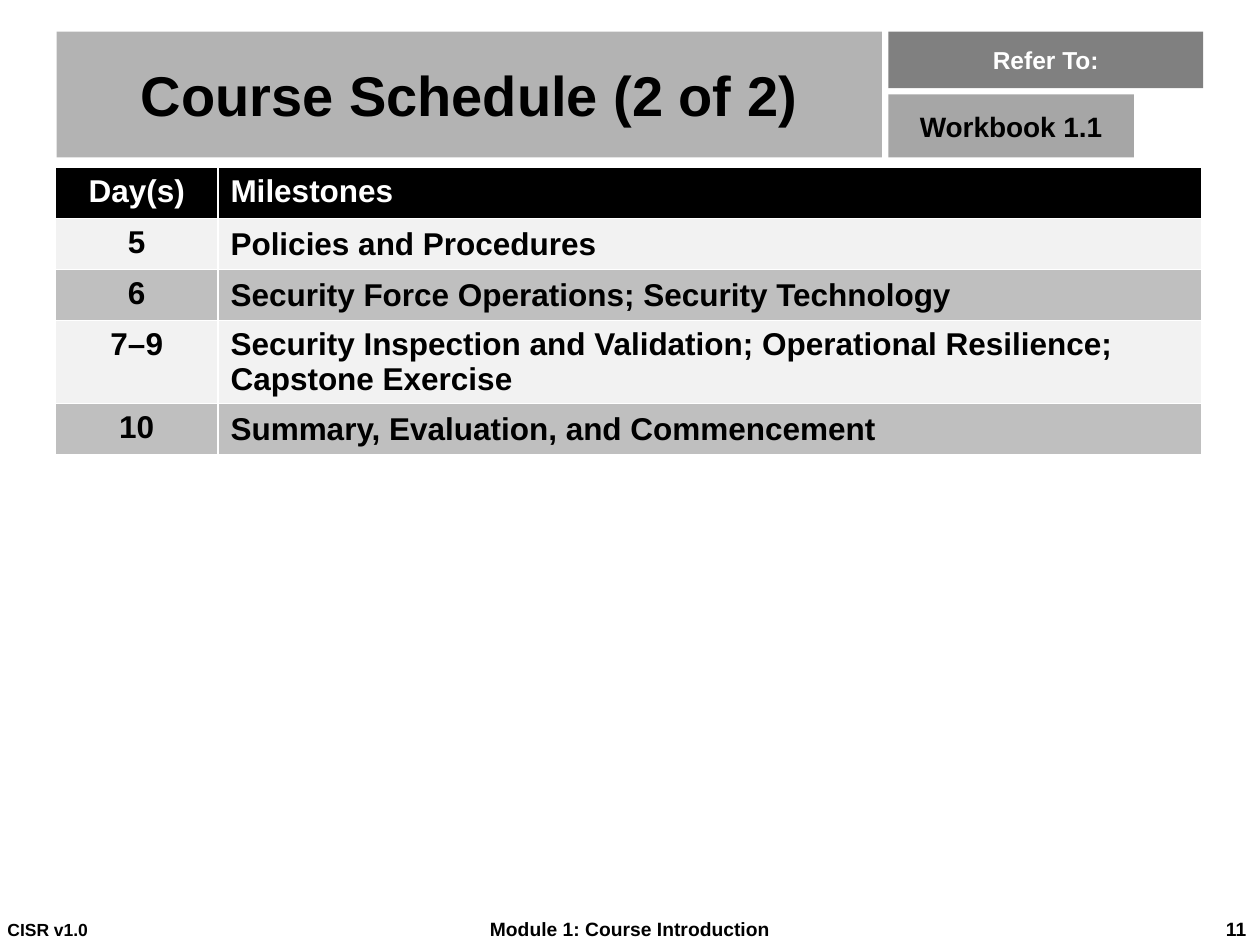
from pptx import Presentation
from pptx.dml.color import RGBColor
from pptx.enum.shapes import MSO_SHAPE as Shape
from pptx.enum.text import MSO_ANCHOR as Anchor, MSO_AUTO_SIZE as AutoSize, PP_ALIGN as Align
from pptx.util import Inches, Pt

COLORS = {
    "black": "000000", "white": "FFFFFF", "title": "B3B3B3", "label": "808080",
    "reference": "A6A6A6", "light": "F2F2F2", "dark": "BFBFBF",
}
CELL = 0.05
SCHEDULE = [
    ("Day(s)", "Milestones"),
    ("5", "Policies and Procedures"),
    ("6", "Security Force Operations; Security Technology"),
    ("7–9", "Security Inspection and Validation; Operational Resilience; Capstone Exercise"),
    ("10", "Summary, Evaluation, and Commencement"),
]


def grid(*counts):
    """Turn counts of grid cells into lengths."""
    return [Inches(count * CELL) for count in counts]


def paint(target, color):
    """Give a shape or table cell a solid fill."""
    target.fill.solid()
    target.fill.fore_color.rgb = RGBColor.from_string(COLORS[color])


def write(frame, text, size, color="black", align=Align.CENTER, anchor=Anchor.MIDDLE, insets=None):
    """Write one bold paragraph in a text frame."""
    frame.word_wrap = True
    frame.vertical_anchor = anchor
    if insets:
        frame.margin_left, frame.margin_right = map(Inches, insets)
        frame.margin_top = frame.margin_bottom = Inches(0.01)
    para = frame.paragraphs[0]
    para.alignment = align
    span = para.add_run()
    span.text = text
    span.font.name = "Arial"
    span.font.size = Pt(size)
    span.font.bold = True
    span.font.color.rgb = RGBColor.from_string(COLORS[color])


def add_panel(page, box, text, fill, size, color="black"):
    """Place a filled rectangle with a centred label."""
    panel = page.shapes.add_shape(Shape.RECTANGLE, *grid(*box))
    panel.shadow.inherit = False
    panel.line.fill.background()
    paint(panel, fill)
    write(panel.text_frame, text, size, color, insets=(0.01, 0.01))


def add_header(page, left, top, width, height):
    """Place the title and, to its right, the two reference panels."""
    title_width, gap = 131, 1
    title = page.shapes.title
    title.left, title.top, title.width, title.height = grid(left, top, title_width, height)
    paint(title, "title")
    title.text_frame.auto_size = AutoSize.NONE
    write(title.text_frame, "Course Schedule (2 of 2)", 32)

    side = left + title_width + gap
    label_height = 9
    lower = label_height + gap
    add_panel(page, (side, top, left + width - side, label_height),
              "Refer To:", "label", 14, "white")
    add_panel(page, (side, top + lower, 39, height - lower),
              "Workbook 1.1", "reference", 16)


def add_schedule(page, left, top, width, height):
    """Place the table of days and milestones, with one taller row for two lines."""
    table = page.shapes.add_table(len(SCHEDULE), 2, *grid(left, top, width, height)).table
    day_width, row_height = 25.8, 8.1
    tall_row = 3
    table.columns[0].width, table.columns[1].width = grid(day_width, width - day_width)
    for index, texts in enumerate(SCHEDULE):
        spare = height - row_height * (len(SCHEDULE) - 1)
        table.rows[index].height, = grid(spare if index == tall_row else row_height)
        header = index == 0
        fill = "black" if header else "light" if index % 2 else "dark"
        for column, text in enumerate(texts):
            cell = table.cell(index, column)
            paint(cell, fill)
            middle = column == 1 and not header
            cell.vertical_anchor = Anchor.MIDDLE if middle else Anchor.TOP
            write(cell.text_frame, text, 18, "white" if header else "black",
                  Align.LEFT if column else Align.CENTER, cell.vertical_anchor)


def add_footer(page, top, height):
    """Place the version, module name and page number along the bottom."""
    parts = [
        ("CISR v1.0", 1, 62, 10, Align.LEFT, (0.01, 0.05)),
        ("Module 1: Course Introduction", 65, 70, 11, Align.CENTER, (0.1, 0.1)),
        ("11", 191, 8.8, 11, Align.RIGHT, (0.1, 0.1)),
    ]
    for text, left, width, size, align, insets in parts:
        box = page.shapes.add_textbox(*grid(left, top, width, height))
        write(box.text_frame, text, size, align=align, insets=insets)


def main():
    """Build the course schedule slide."""
    deck = Presentation()
    deck.slide_width, deck.slide_height = grid(200, 150)
    page = deck.slides.add_slide(deck.slide_layouts[5])
    add_header(page, 9, 5, 182, 20)
    add_schedule(page, 8.8, 26.6, 182, 45.6)
    add_footer(page, 145, 5)
    deck.save("out.pptx")


if __name__ == "__main__":
    main()
